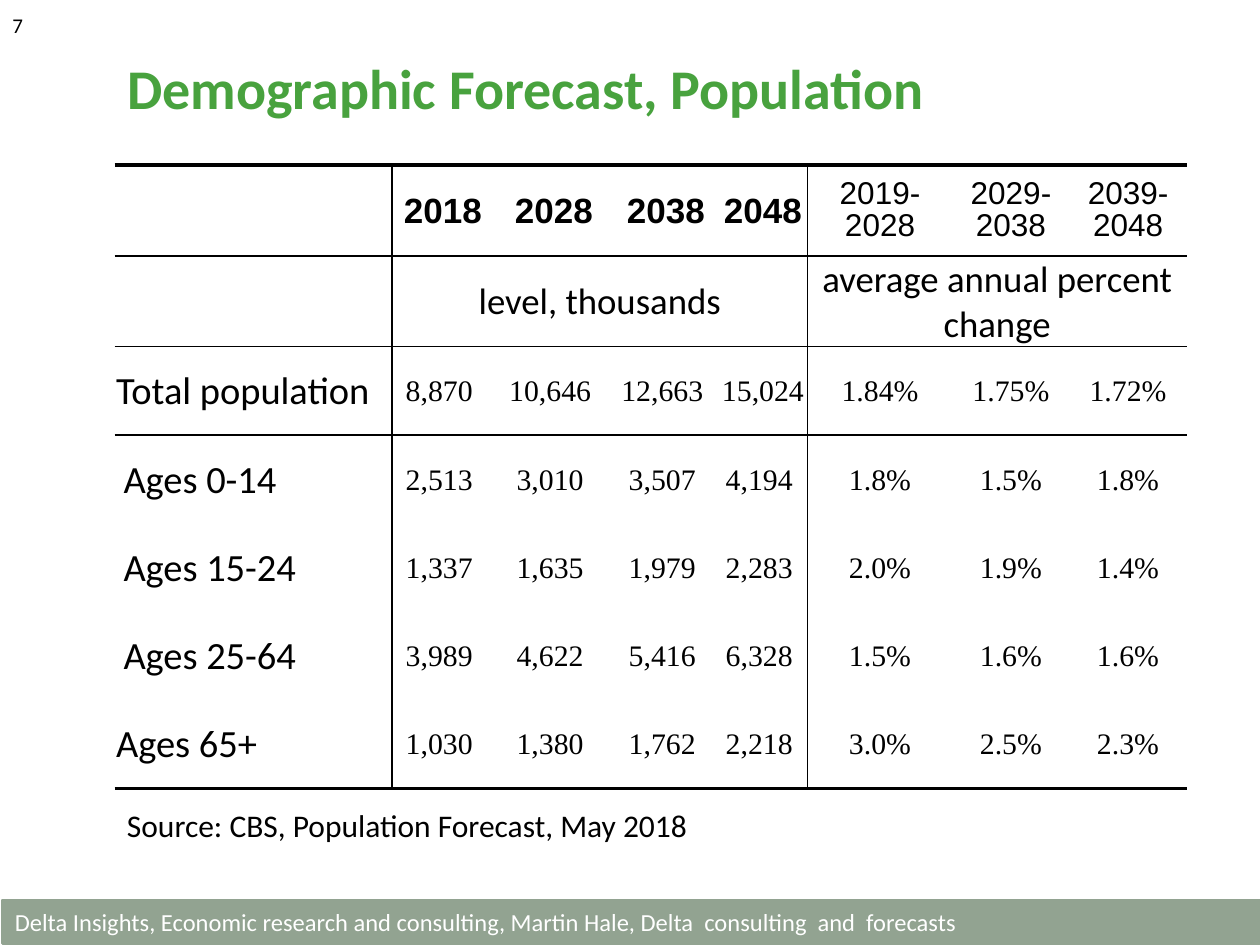
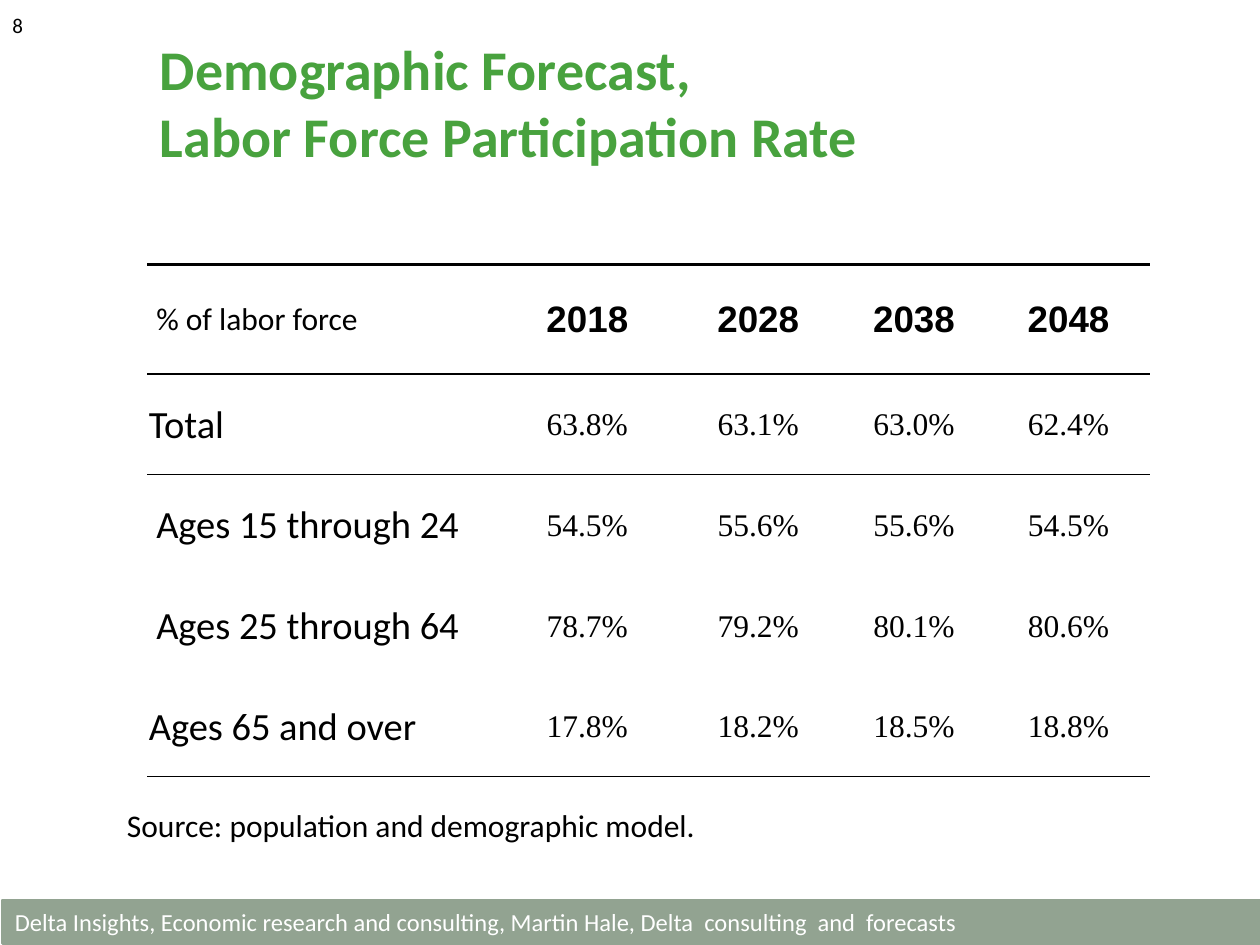
from dataclasses import dataclass

from lxml.etree import SubElement
from pptx import Presentation
from pptx.dml.color import RGBColor as Color
from pptx.enum.shapes import MSO_SHAPE as Preset
from pptx.enum.text import MSO_ANCHOR as Anchor, MSO_AUTO_SIZE as AutoSize, PP_ALIGN as Align
from pptx.oxml import parse_xml
from pptx.oxml.ns import qn
from pptx.util import Cm, Pt


@dataclass(frozen=True)
class Theme:
    ink: str = "000000"
    paper: str = "FFFFFF"
    green: str = "48A23E"
    sage: str = "92A391"
    text_font: str = "Calibri"
    year_font: str = "Arial"
    number_font: str = "Times New Roman"
    title_size: int = 32
    label_size: int = 22
    unit_size: int = 21
    source_size: int = 18
    footer_size: int = 14
    page_number_size: int = 12
    heavy_line: float = 2.25
    line: float = 1


THEME = Theme()
NO_TABLE_STYLE = "{2D5ABB26-0587-4C30-8999-92F81FD0307C}"
CELL_INSET = 0.03
LABEL_INDENT = 0.18
FOOTER = ("Delta Insights, Economic research and consulting, Martin Hale, "
          "Delta  consulting  and  forecasts")

POPULATION = [
    ("Total population", ["8,870", "10,646", "12,663", "15,024"], ["1.84%", "1.75%", "1.72%"]),
    ("Ages 0-14", ["2,513", "3,010", "3,507", "4,194"], ["1.8%", "1.5%", "1.8%"]),
    ("Ages 15-24", ["1,337", "1,635", "1,979", "2,283"], ["2.0%", "1.9%", "1.4%"]),
    ("Ages 25-64", ["3,989", "4,622", "5,416", "6,328"], ["1.5%", "1.6%", "1.6%"]),
    ("Ages 65+", ["1,030", "1,380", "1,762", "2,218"], ["3.0%", "2.5%", "2.3%"]),
]
PARTICIPATION = [
    ("Total", ["63.8%", "63.1%", "63.0%", "62.4%"]),
    ("Ages 15 through 24", ["54.5%", "55.6%", "55.6%", "54.5%"]),
    ("Ages 25 through 64", ["78.7%", "79.2%", "80.1%", "80.6%"]),
    ("Ages 65 and over", ["17.8%", "18.2%", "18.5%", "18.8%"]),
]
YEARS = ["2018", "2028", "2038", "2048"]
PERIODS = ["2019-2028", "2029-2038", "2039-2048"]


def lengths(box):
    return [Cm(value) for value in box]


def write(frame, text, size, font=THEME.text_font, color=THEME.ink, bold=False,
          align=Align.LEFT):
    frame.text = text
    para = frame.paragraphs[0]
    para.alignment = align
    para.font.name = font
    para.font.size = Pt(size)
    para.font.bold = bold
    para.font.color.rgb = Color.from_string(color)
    return para


def add_text(page, box, text, size):
    frame = page.shapes.add_textbox(*lengths(box)).text_frame
    frame.word_wrap = True
    frame.vertical_anchor = Anchor.MIDDLE
    write(frame, text, size)


def add_layout_band(page, box):
    """Draw the footer band and hand it to the layout that the pages share."""
    band = page.shapes.add_shape(Preset.RECTANGLE, *lengths(box))
    band.shadow.inherit = False
    band.fill.solid()
    band.fill.fore_color.rgb = band.line.color.rgb = Color.from_string(THEME.sage)
    band.line.width = Pt(2)
    band.text_frame.vertical_anchor = Anchor.MIDDLE
    write(band.text_frame, FOOTER, THEME.footer_size, color=THEME.paper)
    page.slide_layout.element.cSld.spTree.append(band.element)


def add_title(page, box, text):
    title = page.shapes.title
    title.left, title.top, title.width, title.height = lengths(box)
    frame = title.text_frame
    frame.auto_size = AutoSize.NONE
    frame.vertical_anchor = Anchor.MIDDLE
    write(frame, text, THEME.title_size, color=THEME.green, bold=True)


def add_plain_table(page, left, top, widths, heights):
    table = page.shapes.add_table(len(heights), len(widths),
                                  *lengths((left, top, sum(widths), sum(heights)))).table
    table.first_row = table.horz_banding = False
    table._tbl.tblPr.find(qn("a:tableStyleId")).text = NO_TABLE_STYLE
    for column, width in zip(table.columns, widths):
        column.width = Cm(width)
    for row, height in zip(table.rows, heights):
        row.height = Cm(height)
    for cell in table.iter_cells():
        cell.fill.background()
        cell.vertical_anchor = Anchor.MIDDLE
        cell.margin_left = cell.margin_right = cell.margin_top = Cm(CELL_INSET)
        cell.margin_bottom = 0
    return table


def add_border(cell, side, width):
    """Add one cell border, empty at width 0; sides must come in the order L, R, T, B."""
    properties = cell._tc.get_or_add_tcPr()
    border = parse_xml(
        '<a:ln%s xmlns:a="http://schemas.openxmlformats.org/drawingml/2006/main" w="%d"/>'
        % (side, Pt(width)))
    if width:
        fill = SubElement(border, qn("a:solidFill"))
        SubElement(fill, qn("a:srgbClr")).set("val", THEME.ink)
    else:
        SubElement(border, qn("a:noFill"))
    properties.insert(len(properties) - 1, border)


def rule_table(table, row_lines, ruled_columns=()):
    """Rule the top, the bottoms of the rows in row_lines and the left of ruled_columns."""
    across = {0: THEME.heavy_line, **{row + 1: width for row, width in row_lines.items()}}
    down = dict.fromkeys(ruled_columns, THEME.line)
    for row_index, row in enumerate(table.rows):
        for column_index, cell in enumerate(row.cells):
            span = cell.span_width if cell.is_merge_origin else 1
            add_border(cell, "L", down.get(column_index, 0))
            add_border(cell, "R", down.get(column_index + span, 0))
            add_border(cell, "T", across.get(row_index, 0))
            add_border(cell, "B", across.get(row_index + 1, 0))


def fill_label(cell, text, size=THEME.label_size, indented=False):
    write(cell.text_frame, text, size)
    if indented:
        cell.margin_left = Cm(LABEL_INDENT)


def fill_centered(cell, text, size, font, bold=False):
    return write(cell.text_frame, text, size, font, bold=bold, align=Align.CENTER)


def fill_years(table, size):
    for column, year in enumerate(YEARS, 1):
        fill_centered(table.cell(0, column), year, size, THEME.year_font, bold=True)


def fill_body(table, first_row, rows, size):
    """Write labels and numbers; the rows between total and last group are indented."""
    for index, (label, numbers) in enumerate(rows):
        row = first_row + index
        fill_label(table.cell(row, 0), label, indented=0 < index < len(rows) - 1)
        for column, number in enumerate(numbers, 1):
            fill_centered(table.cell(row, column), number, size, THEME.number_font)


def add_population_table(page, left, top):
    widths = [5.59, 2.06, 2.41, 2.11, 1.8, 2.92, 2.36, 2.36]
    table = add_plain_table(page, left, top, widths, [1.83, 1.83] + [1.78] * len(POPULATION))
    fill_years(table, 20)
    first_period = len(YEARS) + 1
    for column, period in enumerate(PERIODS, first_period):
        para = fill_centered(table.cell(0, column), period, 18, THEME.year_font)
        para.line_spacing = 0.9
    units = [("level, thousands", 1, len(YEARS)),
             ("average annual percent change", first_period, len(widths) - 1)]
    for unit, first, last in units:
        table.cell(1, first).merge(table.cell(1, last))
        fill_centered(table.cell(1, first), unit, THEME.unit_size, THEME.text_font)
    rows = [(label, [level + " " for level in levels] + changes)
            for label, levels, changes in POPULATION]
    fill_body(table, 2, rows, 17)
    rule_table(table, {0: THEME.line, 1: THEME.line, 2: THEME.line, 6: THEME.heavy_line},
               ruled_columns=(1, first_period))


def add_participation_table(page, left, top):
    table = add_plain_table(page, left, top, [7.09, 3.56, 3.33, 2.95, 3.28],
                            [2.21] + [2.03] * len(PARTICIPATION))
    fill_label(table.cell(0, 0), "% of labor force", 18, indented=True)
    fill_years(table, 21)
    fill_body(table, 1, PARTICIPATION, 18)
    rule_table(table, dict.fromkeys((0, 1, len(PARTICIPATION)), THEME.line))


def add_page(deck, number, title, title_box, source):
    page = deck.slides.add_slide(deck.slide_layouts[5])
    add_title(page, title_box, title)
    add_text(page, (0, 0, 5.92, 1.02), str(number), THEME.page_number_size)
    add_text(page, (2.31, 16.13, 21.59, 1.02), source, THEME.source_size)
    return page


def main():
    deck = Presentation()
    deck.slide_width, deck.slide_height = Cm(25.4), Cm(19.05)

    population = add_page(deck, 7, "Demographic Forecast, Population",
                          (2.31, 0.23, 18.34, 3.05),
                          "Source: CBS, Population Forecast, May 2018")
    add_layout_band(population, (0.05, 18.16, 25.43, 0.86))
    add_population_table(population, 2.31, 3.33)

    participation = add_page(deck, 8, "Demographic Forecast,\vLabor Force Participation Rate",
                             (2.97, 0.53, 19.33, 3.05),
                             "Source: population and demographic model.")
    add_participation_table(participation, 2.97, 5.33)

    deck.save("out.pptx")


if __name__ == "__main__":
    main()
